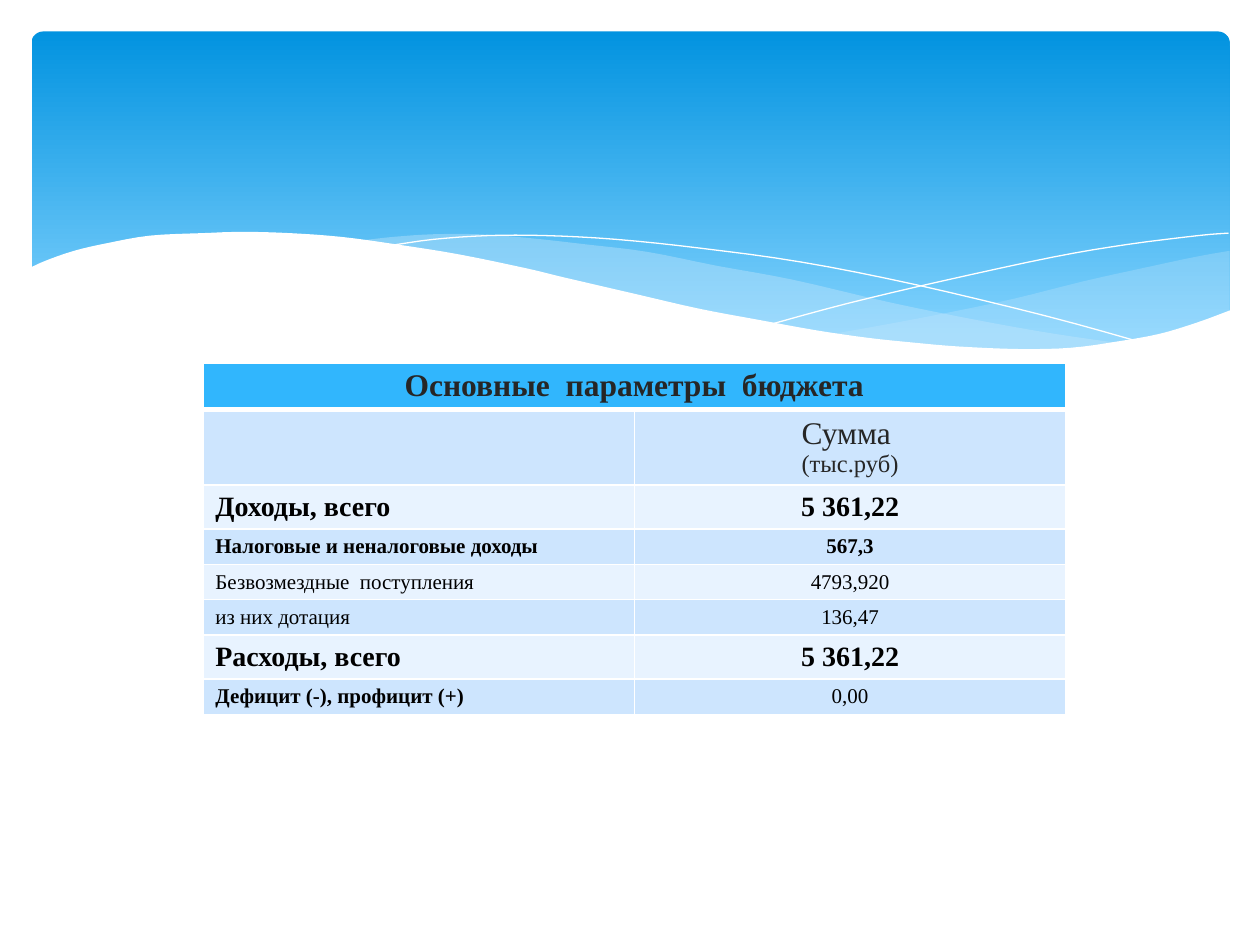
import pptx
import pptx.util
import pptx.dml.color
import pptx.enum.shapes
import pptx.enum.text
import pptx.oxml
import pptx.oxml.ns
from lxml import etree

Inches, Pt = pptx.util.Inches, pptx.util.Pt
qn = pptx.oxml.ns.qn
FONT = "Times New Roman"
C = {"top": "0293E0", "bottom": "83D3FE", "pale": "C6E7FC", "white": "FFFFFF",
     "head": "31B6FD", "dark": "CDE5FE", "light": "E8F3FF", "ink": "262626", "black": "000000"}

RIGHT_TOP = [(9.53, .15), (9.25, .2), (8.83, .29), (8.38, .39), (7.82, .53), (7.3, .64),
             (6.83, .73), (6.38, .81)]
RIGHT_BOTTOM = [(6.38, .81), (6.82, .87), (7.34, .92), (7.8, .94), (8.31, .92), (8.74, .86),
                (9.12, .77), (9.4, .68), (9.53, .63)]
MIDDLE_TOP = [(2.63, .07), (2.9, .04), (3.21, .02), (3.57, .02), (3.97, .05), (4.42, .1),
              (4.91, .16), (5.46, .27), (6.06, .38), (6.83, .56), (7.52, .7), (8.14, .81), (8.7, .89)]
MIDDLE_BOTTOM = [(8.7, .89), (8.25, .93), (7.73, .94), (7.13, .92), (6.57, .84), (5.95, .74),
                 (5.07, .56), (4.26, .38), (3.6, .23), (3, .12), (2.63, .07)]
FALLING_LINE = [(2.86, .11), (3.21, .06), (3.64, .03), (4.1, .03), (4.66, .06), (5.33, .13),
                (6.13, .24), (7.04, .42), (8.08, .67), (8.84, .88)]
RISING_LINE = [(5.9, .73), (6.49, .57), (7.25, .39), (8.13, .2), (8.72, .1), (9.28, .03), (9.52, .01)]
WAVE = [(0, .29), (.13, .23), (.36, .15), (.62, .09), (.96, .03), (1.38, .01), (1.7, 0), (2.07, .01),
        (2.48, .04), (2.92, .1), (3.42, .18), (3.95, .29), (4.24, .36), (4.8, .49), (5.32, .61),
        (5.8, .7), (6.24, .78), (6.65, .84), (7.03, .88), (7.38, .91), (7.86, .93), (8.27, .92),
        (8.64, .87), (8.97, .81), (9.27, .72), (9.54, .62)]

ROWS = [
    ("Доходы, всего", "5 361,22", 16, True, True),
    ("Налоговые и неналоговые доходы", "567,3", 12, True, True),
    ("Безвозмездные  поступления", "4793,920", 12, False, False),
    ("из них дотация", "136,47", 12, False, False),
    ("Расходы, всего", "5 361,22", 16, True, True),
    ("Дефицит (-), профицит (+)", "0,00", 12, True, False),
]


def rgb(name):
    return pptx.dml.color.RGBColor.from_string(C[name])


def smooth(pts, steps=4):
    ext = [pts[0], *pts, pts[-1]]
    out = [pts[0]]
    for a, b, c, d in zip(ext, ext[1:], ext[2:], ext[3:]):
        for i in range(1, steps + 1):
            t = i / steps
            out.append(tuple(
                (2 * q + (r - p) * t + (2 * p - 5 * q + 4 * r - s) * t ** 2
                 + (3 * q - p - 3 * r + s) * t ** 3) / 2
                for p, q, r, s in zip(a, b, c, d)))
    return out


def add_curve(s, left, top, pts, fill=None, alpha=None):
    emu = [(Inches(left + x), Inches(top + y)) for x, y in pts]
    fb = s.shapes.build_freeform(*emu[0])
    fb.add_line_segments(emu[1:], close=fill is not None)
    sp = fb.convert_to_shape()
    sp.shadow.inherit = False
    if fill is None:
        sp.fill.background()
        sp.line.color.rgb = rgb("white")
        sp.line.width = Pt(0)
        return
    sp.fill.solid()
    sp.fill.fore_color.rgb = rgb(fill)
    sp.line.fill.background()
    if alpha is not None:
        clr = sp._element.spPr.find(qn("a:solidFill"))[0]
        etree.SubElement(clr, qn("a:alpha"), val=str(alpha * 1000))


def add_banner(s, left, top, width, height):
    sp = s.shapes.add_shape(pptx.enum.shapes.MSO_SHAPE.ROUNDED_RECTANGLE,
                            Inches(left), Inches(top), Inches(width), Inches(height))
    sp.adjustments[0] = 0.034
    sp.shadow.inherit = False
    sp.line.fill.background()
    sp.fill.gradient()
    sp.fill.gradient_angle = 270
    for stop, name, pos in zip(sp.fill.gradient_stops, ("top", "bottom"), (0, 0.9)):
        stop.color.rgb = rgb(name)
        stop.position = pos


def add_waves(s, left, top, width, height):
    add_curve(s, left, top, smooth(RIGHT_TOP) + smooth(RIGHT_BOTTOM), "pale", 29)
    add_curve(s, left, top, smooth(MIDDLE_TOP) + smooth(MIDDLE_BOTTOM), "pale", 40)
    for line in (FALLING_LINE, RISING_LINE):
        add_curve(s, left, top, smooth(line))
    add_curve(s, left, top, smooth(WAVE) + [(width, height), (0, height)], "white")


def add_text(p, text, size=12, bold=False, color="black", center=True):
    align = pptx.enum.text.PP_ALIGN
    p.alignment = align.CENTER if center else align.LEFT
    r = p.add_run()
    r.text = text
    r.font.name = FONT
    r.font.size = Pt(size)
    r.font.bold = bold
    r.font.color.rgb = rgb(color)


def style_cell(cell, fill, top=1, bottom=1):
    cell.margin_top = cell.margin_bottom = Inches(0.04)
    cell.vertical_anchor = pptx.enum.text.MSO_ANCHOR.MIDDLE
    tcPr = cell._tc.get_or_add_tcPr()
    for tag, width in (("lnL", 1), ("lnR", 1), ("lnT", top), ("lnB", bottom)):
        ln = etree.SubElement(tcPr, qn(f"a:{tag}"), w=str(Pt(width)))
        solid = etree.SubElement(ln, qn("a:solidFill"))
        etree.SubElement(solid, qn("a:srgbClr"), val=C["white"])
    cell.fill.solid()
    cell.fill.fore_color.rgb = rgb(fill)


def add_budget_table(s, left, top, width, height):
    heights = [0.37, 0.6] + [0.35 if row[2] == 16 else 0.28 for row in ROWS]
    tbl = s.shapes.add_table(len(heights), 2, Inches(left), Inches(top),
                             Inches(width), Inches(height)).table
    for row, h in zip(tbl.rows, heights):
        row.height = Inches(h)
    for i in range(len(heights)):
        fill = "head" if i == 0 else "dark" if i % 2 else "light"
        for j in range(2):
            style_cell(tbl.cell(i, j), fill, 3 if i == 1 else 1, 3 if i == 0 else 1)
    tbl.cell(0, 0).merge(tbl.cell(0, 1))
    add_text(tbl.cell(0, 0).text_frame.paragraphs[0], "Основные  параметры  бюджета",
             size=18, bold=True, color="ink")
    tf = tbl.cell(1, 1).text_frame
    add_text(tf.paragraphs[0], "Сумма ", size=18, color="ink")
    add_text(tf.add_paragraph(), "(тыс.руб)", size=14, color="ink")
    for i, (label, value, size, label_bold, value_bold) in enumerate(ROWS, 2):
        add_text(tbl.cell(i, 0).text_frame.paragraphs[0], label, size=size,
                 bold=label_bold, center=False)
        add_text(tbl.cell(i, 1).text_frame.paragraphs[0], value, size=size, bold=value_bold)


def main():
    prs = pptx.Presentation()
    prs.slide_width, prs.slide_height = Inches(10), Inches(7.5)
    s = prs.slides.add_slide(prs.slide_layouts[6])
    add_banner(s, 0.25, 0.25, 9.51, 2.7)
    add_waves(s, 0.23, 1.84, 9.54, 1.45)
    add_budget_table(s, 1.61, 2.88, 6.85, 2.79)
    prs.save("out.pptx")


if __name__ == "__main__":
    main()
